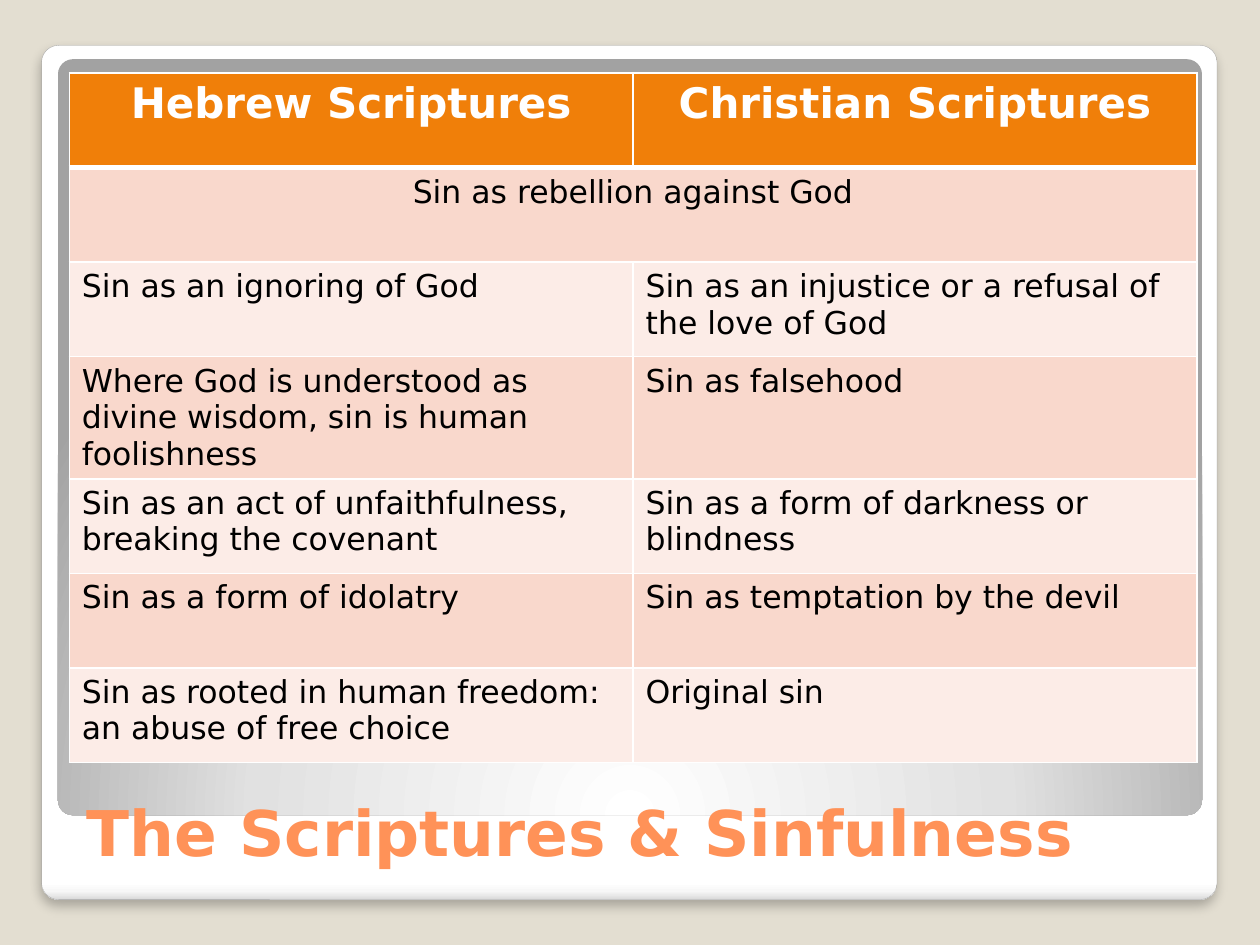
from dataclasses import dataclass

from pptx import Presentation
from pptx.dml.color import RGBColor
from pptx.enum.shapes import MSO_SHAPE
from pptx.enum.text import MSO_ANCHOR, PP_ALIGN
from pptx.oxml import parse_xml
from pptx.oxml.ns import nsdecls, qn
from pptx.shapes.autoshape import Shape
from pptx.slide import Slide
from pptx.table import _Cell as Cell
from pptx.text.text import TextFrame
from pptx.util import Inches, Pt


@dataclass(frozen=True)
class Theme:
    font: str = "DejaVu Sans"
    background: str = "E3DED1"
    title: str = "FF9258"
    header: str = "F07F09"
    dark_band: str = "F9D8CC"
    light_band: str = "FCECE7"
    text: str = "000000"
    white: str = "FFFFFF"
    frame_line: str = "A4A4A4"
    title_size: int = 36
    header_size: int = 24
    body_size: int = 18


@dataclass(frozen=True)
class Panel:
    left: float
    top: float
    width: float
    height: float
    stops: tuple[tuple[int, str], ...]
    direction: str
    line: str | None = None
    shadow: bool = False


THEME = Theme()
LINEAR_DOWN = '<a:lin ang="5400000" scaled="0"/>'
RADIAL_FROM_BELOW = (
    '<a:path path="circle">'
    '<a:fillToRect l="50000" t="175000" r="50000" b="-75000"/></a:path>'
)
PANELS = (
    Panel(0.33, 0.36, 9.33, 6.78,
          ((0, "FFFFFF"), (98, "FFFFFF"), (99, "F7F7F7"), (100, "DADADA")),
          LINEAR_DOWN, line=THEME.frame_line, shadow=True),
    Panel(0.46, 0.47, 9.08, 6,
          ((0, "FFFFFF"), (55, "E1E1E1"), (100, "A2A2A2")),
          RADIAL_FROM_BELOW),
)
HEADERS = ("Hebrew Scriptures", "Christian Scriptures")
SHARED_VIEW = "Sin as rebellion against God"
VIEWS = (
    ("Sin as an ignoring of God",
     "Sin as an injustice or a refusal of the love of God"),
    ("Where God is understood as divine wisdom, sin is human foolishness",
     "Sin as falsehood"),
    ("Sin as an act of unfaithfulness, breaking the covenant",
     "Sin as a form of darkness or blindness"),
    ("Sin as a form of idolatry", "Sin as temptation by the devil"),
    ("Sin as rooted in human freedom: an abuse of free choice", "Original sin"),
)


def write_text(frame: TextFrame, text: str, *, size: int, color: str,
               bold: bool = False, align: PP_ALIGN = PP_ALIGN.LEFT) -> None:
    paragraph = frame.paragraphs[0]
    paragraph.alignment = align
    run = paragraph.add_run()
    run.text = text
    run.font.name = THEME.font
    run.font.size = Pt(size)
    run.font.bold = bold
    run.font.color.rgb = RGBColor.from_string(color)


def fill_gradient(shape: Shape, panel: Panel) -> None:
    shape.fill.gradient()
    properties = shape.element.spPr
    stops = "".join(
        f'<a:gs pos="{position * 1000}"><a:srgbClr val="{color}"/></a:gs>'
        for position, color in panel.stops
    )
    gradient = parse_xml(
        f'<a:gradFill {nsdecls("a")} rotWithShape="1">'
        f"<a:gsLst>{stops}</a:gsLst>{panel.direction}</a:gradFill>"
    )
    properties.replace(properties.find(qn("a:gradFill")), gradient)


def add_panel(slide: Slide, panel: Panel) -> None:
    shape = slide.shapes.add_shape(
        MSO_SHAPE.ROUNDED_RECTANGLE, Inches(panel.left), Inches(panel.top),
        Inches(panel.width), Inches(panel.height))
    shape.adjustments[0] = 0.02
    fill_gradient(shape, panel)
    if panel.line:
        shape.line.color.rgb = RGBColor.from_string(panel.line)
        shape.line.width = Pt(0.16)
    else:
        shape.line.fill.background()
    shape.shadow.inherit = False
    if panel.shadow:
        shape.element.spPr.find(qn("a:effectLst")).append(parse_xml(
            f'<a:outerShdw {nsdecls("a")} blurRad="{Pt(6)}" dist="{Pt(4)}" '
            'dir="5400000" algn="t" rotWithShape="0"><a:srgbClr val="000000">'
            '<a:alpha val="25000"/></a:srgbClr></a:outerShdw>'))


def style_cell(cell: Cell, fill: str, top: int, bottom: int) -> None:
    cell.fill.solid()
    cell.fill.fore_color.rgb = RGBColor.from_string(fill)
    properties = cell._tc.get_or_add_tcPr()
    borders = (("L", 1), ("R", 1), ("T", top), ("B", bottom))
    for index, (side, width) in enumerate(borders):
        properties.insert(index, parse_xml(
            f'<a:ln{side} {nsdecls("a")} w="{Pt(width)}"><a:solidFill>'
            f'<a:srgbClr val="{THEME.white}"/></a:solidFill></a:ln{side}>'))


def add_views_table(slide: Slide) -> None:
    rows = (HEADERS, (SHARED_VIEW, ""), *VIEWS)
    row_height = Inches(0.75)
    table = slide.shapes.add_table(
        len(rows), len(HEADERS), Inches(0.55), Inches(0.58),
        Inches(8.95), row_height * len(rows)).table
    for row_index, texts in enumerate(rows):
        table.rows[row_index].height = row_height
        is_header = row_index == 0
        band = THEME.dark_band if row_index % 2 else THEME.light_band
        for column_index, text in enumerate(texts):
            cell = table.cell(row_index, column_index)
            style_cell(cell, THEME.header if is_header else band,
                       top=3 if row_index == 1 else 1,
                       bottom=3 if is_header else 1)
            if text:
                write_text(
                    cell.text_frame, text,
                    size=THEME.header_size if is_header else THEME.body_size,
                    color=THEME.white if is_header else THEME.text,
                    bold=is_header,
                    align=PP_ALIGN.CENTER if row_index < 2 else PP_ALIGN.LEFT)
    table.cell(1, 0).merge(table.cell(1, 1))


def place_title(slide: Slide, text: str) -> None:
    title = slide.shapes.title
    title.left, title.top = Inches(0.59), Inches(5.8)
    title.width, title.height = Inches(8.95), Inches(1.15)
    title.text_frame.vertical_anchor = MSO_ANCHOR.BOTTOM
    title.text_frame.word_wrap = True
    write_text(title.text_frame, text, size=THEME.title_size,
               color=THEME.title, bold=True)
    slide.shapes.element.append(title.element)


def main() -> None:
    presentation = Presentation()
    presentation.slide_width, presentation.slide_height = Inches(10), Inches(7.5)
    slide = presentation.slides.add_slide(presentation.slide_layouts[5])
    slide.background.fill.solid()
    slide.background.fill.fore_color.rgb = RGBColor.from_string(THEME.background)
    for panel in PANELS:
        add_panel(slide, panel)
    place_title(slide, "The Scriptures & Sinfulness")
    add_views_table(slide)
    presentation.save("out.pptx")


if __name__ == "__main__":
    main()
